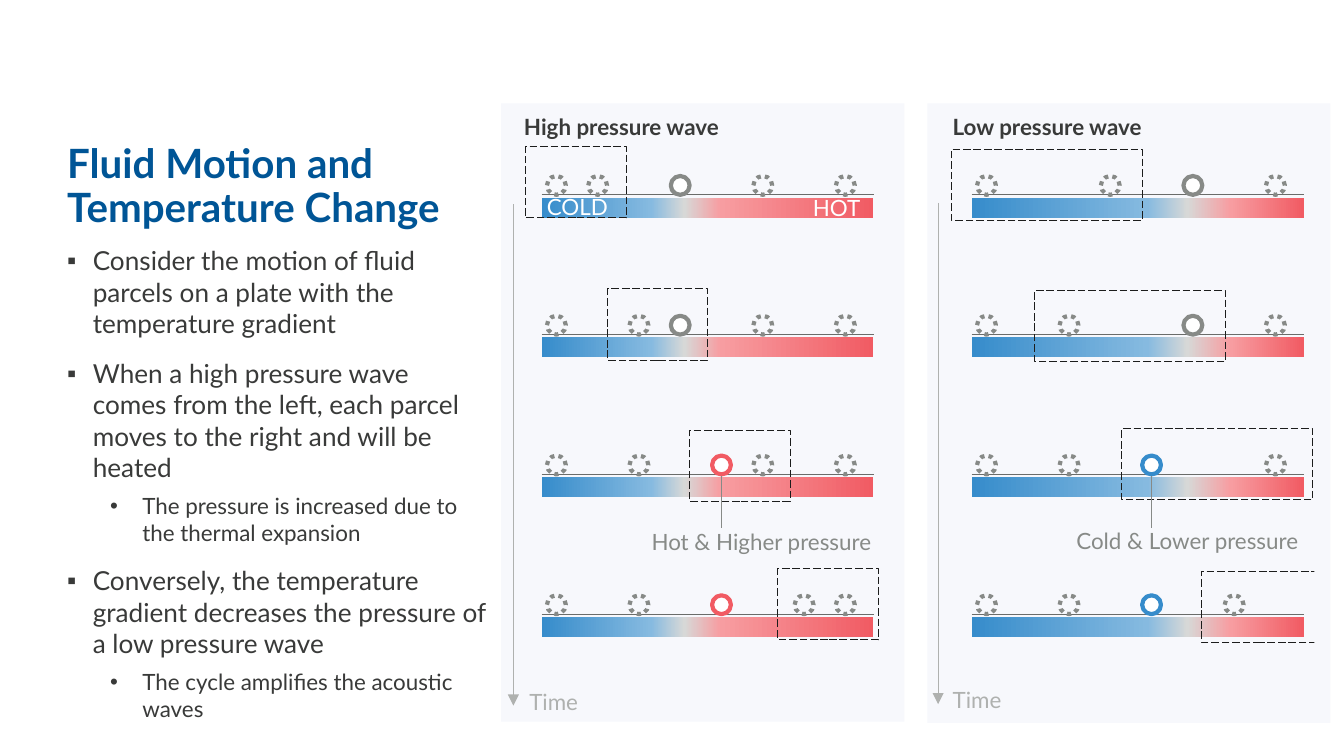
from lxml import etree
from pptx import Presentation
from pptx import util as u
from pptx.dml.color import RGBColor
from pptx.enum import dml, shapes, text
from pptx.oxml import ns

TITLE = "Fluid Motion and Temperature Change"
BULLETS = [
    (0, "Consider the motion of fluid parcels on a plate with the temperature gradient"),
    (0, "When a high pressure wave comes from the left, each parcel moves to the right and will be heated"),
    (1, "The pressure is increased due to the thermal expansion"),
    (0, "Conversely, the temperature gradient decreases the pressure of a low pressure wave"),
    (1, "The cycle amplifies the acoustic waves"),
]
PANELS = [
    dict(heading="High pressure wave", result="Hot & Higher pressure", accent="hot",
         panel=3.73, height=4.6, plate=4.03, heading_box=(3.8, 1.68),
         result_box=(4.75, 3.88, 1.86), axis=(3.82, 1.52), time_box=(3.84, 5.07),
         stops=(0, 33, 43, 54, 100), ends=("COLD", "HOT"),
         parcels=[(0, 1, 3, 5, 7), (0, 2, 3, 5, 7), (0, 2, 4, 5, 7), (0, 2, 4, 6, 7)],
         tracked=(3, 3, 4, 4),
         windows=[(-0.52, 1.09, 2.44), (1.46, 2.15, 2.44), (3.45, 3.2, 2.44), (5.59, 4.23, 2.44)]),
    dict(heading="Low pressure wave", result="Cold & Lower pressure", accent="cold",
         panel=6.9, height=4.61, plate=7.23, heading_box=(6.99, 1.64),
         result_box=(7.91, 3.87, 1.88), axis=(6.98, 1.51), time_box=(6.99, 5.06),
         stops=(0, 53, 65, 78, 100), ends=None,
         parcels=[(0, 3, 5, 7), (0, 2, 5, 7), (0, 2, 4, 7), (0, 2, 4, 6)],
         tracked=(5, 5, 4, 4),
         windows=[(-0.62, 1.11, 4.62), (1.4, 2.16, 4.62), (3.51, 3.19, 4.62), (5.43, 4.25, 2.89)]),
]
THEME = dict(
    font="Lato", title="005596", body="393A39", panel="F7F8FC", white="FFFFFF",
    hot="F15B63", cold="368CCB", ring="878A87", edge="6A6C6A", window="1C1D1C", axis="AFB1AF",
    gradient=("368CCB", "86BAE0", "D7D8D7", "F79DA1", "F15B63"),
    title_size=21.6, level_sizes=(14, 12), label_size=12,
)
LEVELS = [dict(bullet="▪", indent=0.19, hang=0.19, before=10),
          dict(bullet="•", indent=0.56, hang=0.24, before=5)]
SLIDE_WIDTH = 10
SLIDE_HEIGHT = SLIDE_WIDTH * 9 / 16
FIRST_SLOT, LAST_SLOT, SLOTS = 0.04, 2.19, 7
SLOT = (LAST_SLOT - FIRST_SLOT) / SLOTS
RING = 0.14
ROW = 1.04
PLATE_WIDTH, PLATE_HEIGHT = 2.47, 0.15
RING_TOP, EDGE_TOP, PLATE_TOP = 1.31, 1.45, 1.47
WINDOW_HEIGHT = 0.53
AXIS_LENGTH = 3.73
HEATED_ROW = 2
DASH = dml.MSO_LINE


def color(name):
    return RGBColor.from_string(THEME[name])


def format_font(font, name, size, bold=False):
    for key, value in dict(name=THEME["font"], size=u.Pt(size), bold=bold).items():
        setattr(font, key, value)
    font.color.rgb = color(name)


def format_frame(frame, **values):
    for key, value in values.items():
        setattr(frame, key, value)


def add_shape(parent, left, top, width, height, kind=shapes.MSO_SHAPE.RECTANGLE,
              fill=None, line=None, weight=0.5, dash=None):
    shape = parent.add_shape(kind, *map(u.Inches, (left, top, width, height)))
    shape.shadow.inherit = False
    if fill:
        shape.fill.solid()
        shape.fill.fore_color.rgb = color(fill)
    else:
        shape.fill.background()
    if line:
        shape.line.color.rgb = color(line)
        shape.line.width = u.Pt(weight)
        if dash:
            shape.line.dash_style = dash
    else:
        shape.line.fill.background()
    return shape


def add_line(parent, start, end, name, arrow=False):
    line = parent.add_connector(shapes.MSO_CONNECTOR.STRAIGHT, *map(u.Inches, start + end))
    line.line.color.rgb = color(name)
    line.line.width = u.Pt(0.5)
    if arrow:
        outline = line._element.spPr.find(ns.qn("a:ln"))
        etree.SubElement(outline, ns.qn("a:tailEnd"), type="triangle")
    etree.SubElement(line._element.spPr, ns.qn("a:effectLst"))


def add_label(parent, words, left, top, width, name, bold=False):
    box = parent.add_textbox(*map(u.Inches, (left, top, width, 0.3)))
    format_frame(box.text_frame, word_wrap=False, auto_size=text.MSO_AUTO_SIZE.SHAPE_TO_FIT_TEXT)
    paragraph = box.text_frame.paragraphs[0]
    paragraph.text = words
    format_font(paragraph.font, name, THEME["label_size"], bold)


def add_plate(parent, left, top, positions):
    plate = add_shape(parent, left, top, PLATE_WIDTH, PLATE_HEIGHT)
    plate.fill.gradient()
    plate.fill.gradient_angle = 0
    stops = plate._element.spPr.find(".//" + ns.qn("a:gsLst"))
    for stop in list(stops):
        stops.remove(stop)
    for position, value in zip(positions, THEME["gradient"]):
        stop = etree.SubElement(stops, ns.qn("a:gs"), pos=str(position * 1000))
        etree.SubElement(stop, ns.qn("a:srgbClr"), val=value)
    return plate


def fill_placeholders(slide):
    title, body = slide.shapes.title, slide.placeholders[1]
    for holder, top, height, anchor in ((title, 0.89, 0.88, text.MSO_ANCHOR.BOTTOM),
                                        (body, 1.77, 3.46, text.MSO_ANCHOR.TOP)):
        for key, value in dict(left=0.5, top=top, width=3.23, height=height).items():
            setattr(holder, key, u.Inches(value))
        format_frame(holder.text_frame, word_wrap=True, auto_size=text.MSO_AUTO_SIZE.NONE,
                     vertical_anchor=anchor, margin_left=0, margin_right=u.Inches(0.1),
                     margin_top=u.Inches(0.05), margin_bottom=u.Inches(0.05))
    title.text_frame.text = TITLE
    heading = title.text_frame.paragraphs[0]
    heading.alignment = text.PP_ALIGN.LEFT
    heading.line_spacing = 0.9
    format_font(heading.font, "title", THEME["title_size"], True)
    for index, (level, words) in enumerate(BULLETS):
        frame = body.text_frame
        paragraph = frame.add_paragraph() if index else frame.paragraphs[0]
        style = LEVELS[level]
        paragraph.text = words
        paragraph.level = level
        paragraph.space_before = u.Pt(style["before"] if index else 0)
        properties = paragraph._p.get_or_add_pPr()
        properties.set("marL", str(u.Inches(style["indent"])))
        properties.set("indent", str(-u.Inches(style["hang"])))
        etree.SubElement(properties, ns.qn("a:buChar"), char=style["bullet"])
        format_font(paragraph.font, "body", THEME["level_sizes"][level])


def draw_panel(slide, panel):
    parent = slide.shapes
    plate_left = panel["plate"]
    lane = plate_left + FIRST_SLOT
    add_shape(parent, panel["panel"], 0.77, 3, panel["height"], fill="panel")
    plates = [add_plate(parent, plate_left, PLATE_TOP + row * ROW, panel["stops"])
              for row in range(len(panel["parcels"]))]
    for row, (parcels, tracked) in enumerate(zip(panel["parcels"], panel["tracked"])):
        group = parent.add_group_shape().shapes
        edge = EDGE_TOP + row * ROW
        add_line(group, (plate_left, edge), (plate_left + PLATE_WIDTH, edge), "edge")
        accent = panel["accent"] if row >= HEATED_ROW else "ring"
        for slot in parcels:
            style = (dict(fill="white", line=accent) if slot == tracked
                     else dict(line="ring", dash=DASH.ROUND_DOT))
            add_shape(group, lane + slot * SLOT, RING_TOP + row * ROW, RING, RING,
                      shapes.MSO_SHAPE.OVAL, weight=2.25, **style)
    for slot, top, span in panel["windows"]:
        add_shape(parent, lane + slot * SLOT, top, span * SLOT, WINDOW_HEIGHT,
                  line="window", dash=DASH.LONG_DASH)
    heading_left, heading_width = panel["heading_box"]
    add_label(parent, panel["heading"], heading_left, 0.79, heading_width, "body", True)
    axis_left, axis_top = panel["axis"]
    add_line(parent, (axis_left, axis_top), (axis_left, axis_top + AXIS_LENGTH), "axis", arrow=True)
    add_label(parent, "Time", *panel["time_box"], 0.57, "axis")
    marker = lane + panel["tracked"][HEATED_ROW] * SLOT + RING / 2
    add_line(parent, (marker, 3.54), (marker, 3.93), "ring")
    add_label(parent, panel["result"], *panel["result_box"], "ring")
    if panel["ends"]:
        cold, hot = panel["ends"]
        add_label(parent, cold, plate_left - 0.06, 1.39, 0.66, "white")
        frame = plates[0].text_frame
        format_frame(frame, word_wrap=True, vertical_anchor=text.MSO_ANCHOR.MIDDLE)
        paragraph = frame.paragraphs[0]
        paragraph.text = hot
        paragraph.alignment = text.PP_ALIGN.RIGHT
        format_font(paragraph.font, "white", THEME["label_size"])


def main():
    presentation = Presentation()
    presentation.slide_width = u.Inches(SLIDE_WIDTH)
    presentation.slide_height = u.Inches(SLIDE_HEIGHT)
    slide = presentation.slides.add_slide(presentation.slide_layouts[1])
    fill_placeholders(slide)
    for panel in PANELS:
        draw_panel(slide, panel)
    add_shape(slide.shapes, 9.78, 4.09, 0.1, 0.88, fill="panel")
    presentation.save("out.pptx")


if __name__ == "__main__":
    main()
